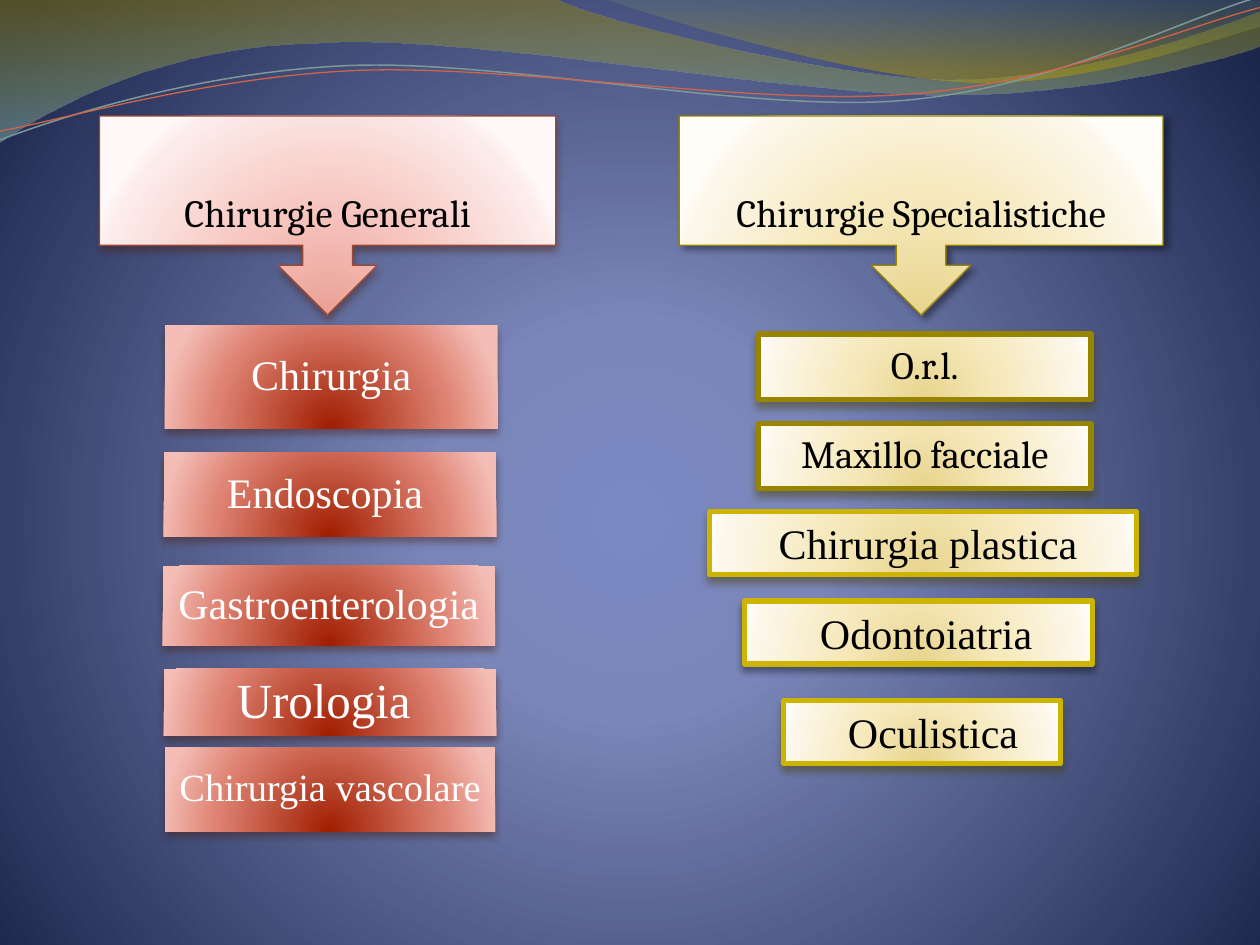
import math
from dataclasses import dataclass
from lxml import etree
from pptx import Presentation
from pptx.dml.color import RGBColor
from pptx.enum.shapes import MSO_SHAPE
from pptx.enum.text import MSO_ANCHOR, MSO_AUTO_SIZE, PP_ALIGN
from pptx.oxml.ns import qn
from pptx.util import Inches, Pt

RECT = MSO_SHAPE.RECTANGLE
CALLOUT = MSO_SHAPE.DOWN_ARROW_CALLOUT
TOP, MIDDLE = MSO_ANCHOR.TOP, MSO_ANCHOR.MIDDLE
GROW, FIXED = MSO_AUTO_SIZE.SHAPE_TO_FIT_TEXT, MSO_AUTO_SIZE.NONE
CENTER = PP_ALIGN.CENTER
SERIF, HEAD = "Times New Roman", "Cambria"
COLORS = {
    "black": "000000", "white": "FFFFFF", "red_edge": "9C4834",
    "olive": "978500", "gold": "CCB400", "teal_wave": "7C999A",
    "red_wave": "D16349", "red_shadow": "4B2218", "olive_shadow": "483F00",
}
GRADIENTS = {
    "night": [(0, "7A88C3"), (25, "7A86B9"), (100, "1B254B")],
    "pink": [(0, "EAA096"), (43, "F7C5BF"), (93, "FCEDEB"), (100, "FFF8F8")],
    "red": [(0, "A01D00"), (68, "DF8474"), (100, "F4BEB7")],
    "cream": [(0, "E7D48D"), (43, "F6E8BA"), (93, "FCF7EA"), (100, "FFFDF7")],
    "wave_left": [(0, "978500", 45), (100, "77A5A6", 55)],
    "wave_right": [(0, "648484", 30), (80, "B49F00", 45)],
}
BOX_FOCUS = (50, 130, 50, -30)
SHADOWS = {
    "red": ("red_shadow", 48, 4.5, 3, 90),
    "olive": ("olive_shadow", 48, 4.5, 3, 90),
    "black": ("black", 40, 4, 3, 90),
    "slanted": ("black", 40, 4, 3, 45),
}


@dataclass
class Box:
    text: str
    left: float
    top: float
    width: float
    height: float
    fill: str
    shadow: str
    size: float = 24
    font: str = SERIF
    color: str = "black"
    edge: str = ""
    weight: float = 3
    nudge: float = 0
    inset: float = 0.09
    kind: int = RECT
    grow: bool = False


@dataclass
class Wave:
    start: tuple
    steps: list
    fill: str = ""
    edge: str = ""
    weight: float = 0
    center: tuple = (0, 0)
    tilt: float = 0


def red_box(text: str, left: float, top: float, width: float, height: float,
            **extra) -> Box:
    return Box(text, left, top, width, height, "red", "red", color="white", **extra)


def olive_box(text: str, top: float) -> Box:
    return Box(text, 6.02, top, 2.64, 0.52, "cream", "olive", 22, HEAD, edge="olive")


def gold_box(text: str, left: float, top: float, width: float, nudge: float,
             shadow: str = "olive") -> Box:
    return Box(text, left, top, width, 0.5, "cream", shadow, edge="gold",
               nudge=nudge, inset=0.1, grow=True)


def header(text: str, left: float, width: float, fill: str, shadow: str, edge: str) -> Box:
    return Box(text, left, 0.92, width, 1.58, fill, shadow, 22, HEAD,
               edge=edge, weight=0.75, kind=CALLOUT)


BOXES = [
    header("Chirurgie Generali", 0.79, 3.62, "pink", "red", "red_edge"),
    olive_box("O.r.l.", 2.65),
    red_box("Chirurgia", 1.31, 2.58, 2.64, 0.82, inset=0.1),
    red_box("Chirurgia vascolare", 1.31, 5.93, 2.62, 0.67, size=22),
    red_box("Gastroenterologia", 1.29, 4.49, 2.64, 0.63, inset=0.1),
    red_box("Endoscopia", 1.3, 3.59, 2.64, 0.67, nudge=-0.08, inset=0.1),
    red_box("Urologia", 1.3, 5.31, 2.64, 0.53, size=28, nudge=-0.1, inset=0.12),
    header("Chirurgie Specialistiche", 5.39, 3.84, "cream", "slanted", "olive"),
    olive_box("Maxillo facciale", 3.36),
    gold_box("Odontoiatria", 5.91, 4.77, 2.76, 0.12, "black"),
    gold_box("Oculistica", 6.22, 5.56, 2.2, 0.17),
    gold_box("Chirurgia plastica", 5.63, 4.06, 3.39, 0.08),
]
WAVES = [
    Wave((0, 0), [
        (4.4, -0.01), (4.76, 0.17, 6.64, 0.63, 7.58, 0.63),
        (8.53, 0.63, 9.58, 0.26, 10, 0.09), (10.01, 0.36),
        (9.83, 0.44, 8.7, 0.76, 7.46, 0.75), (6.22, 0.75, 3.82, 0.28, 2.57, 0.34),
        (1.29, 0.36, 0.46, 0.83, -0.01, 1.13), (0, 0)], fill="wave_left"),
    Wave((4.79, -0.01), [
        (5.09, 0.11, 6.82, 0.62, 7.69, 0.65), (8.56, 0.69, 9.61, 0.32, 10, 0.21),
        (10, 0), (4.79, -0.01)], fill="wave_right"),
    Wave((0, 1.11), [
        (0.48, 0.93, 1.58, 0.57, 2.77, 0.52), (3.95, 0.47, 5.93, 0.89, 7.13, 0.8),
        (8.33, 0.71, 9.38, 0.15, 9.98, -0.02)], "", "teal_wave", 0.85, (4.99, 0.57), -2.7),
    Wave((0, 1.04), [
        (0.47, 0.96, 1.64, 0.61, 2.83, 0.56), (4.03, 0.51, 5.97, 0.84, 7.17, 0.75),
        (8.36, 0.67, 9.41, 0.21, 10, 0.06)], "", "red_wave", 0.75, (5, 0.59), -2.7),
]


def add_color(parent, value: str, alpha: float = 100) -> None:
    clr = etree.SubElement(parent, qn("a:srgbClr"), val=value)
    if alpha < 100:
        etree.SubElement(clr, qn("a:alpha"), val=str(alpha * 1000))


def set_gradient(fill, props, name: str, focus: tuple = ()) -> None:
    fill.solid()
    grad = etree.Element(qn("a:gradFill"), rotWithShape="1")
    stops = etree.SubElement(grad, qn("a:gsLst"))
    for pos, *color in GRADIENTS[name]:
        add_color(etree.SubElement(stops, qn("a:gs"), pos=str(pos * 1000)), *color)
    if focus:
        circle = etree.SubElement(grad, qn("a:path"))
        circle.set("path", "circle")
        sides = {k: str(v * 1000) for k, v in zip("ltrb", focus)}
        etree.SubElement(circle, qn("a:fillToRect"), **sides)
    else:
        etree.SubElement(grad, qn("a:lin"), ang="5400000", scaled="1")
    props.replace(props.find(qn("a:solidFill")), grad)


def set_line(sp, edge: str, weight: float) -> None:
    if edge:
        sp.line.color.rgb = RGBColor.from_string(COLORS[edge])
        sp.line.width = Pt(weight)
    else:
        sp.line.fill.background()


def set_shadow(sp, name: str) -> None:
    color, alpha, blur, dist, angle = SHADOWS[name]
    effects = sp._element.spPr.find(qn("a:effectLst"))
    outer = etree.SubElement(effects, qn("a:outerShdw"), blurRad=str(Pt(blur)),
                             dist=str(Pt(dist)), dir=str(angle * 60000), rotWithShape="0")
    add_color(outer, COLORS[color], alpha)


def untilt(wave: Wave, x: float, y: float) -> tuple:
    a, (cx, cy) = math.radians(-wave.tilt), wave.center
    dx, dy = x - cx, y - cy
    return (Inches(cx + dx * math.cos(a) - dy * math.sin(a)),
            Inches(cy + dx * math.sin(a) + dy * math.cos(a)))


def draw_wave(s, master, wave: Wave) -> None:
    points = [untilt(wave, *step[i:i + 2])
              for step in wave.steps for i in range(0, len(step), 2)]
    builder = s.shapes.build_freeform(*untilt(wave, *wave.start))
    builder.add_line_segments(points, close=bool(wave.fill))
    sp = builder.convert_to_shape()
    segments = iter(list(sp._element.iter(qn("a:lnTo"))))
    for step in wave.steps:
        parts = [next(segments) for _ in range(len(step) // 2)]
        if len(parts) == 3:
            curve = etree.Element(qn("a:cubicBezTo"))
            parts[0].addprevious(curve)
            for part in parts:
                curve.append(part[0])
                part.getparent().remove(part)
    sp.rotation = wave.tilt
    sp.shadow.inherit = False
    if wave.fill:
        set_gradient(sp.fill, sp._element.spPr, wave.fill)
    else:
        sp.fill.background()
    set_line(sp, wave.edge, wave.weight)
    master.shapes._spTree.append(sp._element)


def write_text(sp, box: Box) -> None:
    tf = sp.text_frame
    edge = Inches(0.05 if box.grow else box.inset)
    frame = {
        "word_wrap": True, "auto_size": GROW if box.grow else FIXED,
        "vertical_anchor": TOP if box.grow else MIDDLE,
        "margin_left": Inches(box.inset + max(box.nudge, 0)),
        "margin_right": Inches(box.inset + max(-box.nudge, 0)),
        "margin_top": edge, "margin_bottom": edge,
    }
    for key, value in frame.items():
        setattr(tf, key, value)
    p = tf.paragraphs[0]
    p.alignment = CENTER
    if not box.grow:
        p.line_spacing = 0.9
    r = p.add_run()
    r.text = box.text
    for key, value in {"size": Pt(box.size), "name": box.font}.items():
        setattr(r.font, key, value)
    r.font.color.rgb = RGBColor.from_string(COLORS[box.color])


def draw_box(s, box: Box) -> None:
    place = [Inches(v) for v in (box.left, box.top, box.width, box.height)]
    sp = s.shapes.add_shape(box.kind, *place)
    sp.shadow.inherit = False
    set_gradient(sp.fill, sp._element.spPr, box.fill, BOX_FOCUS)
    set_line(sp, box.edge, box.weight)
    set_shadow(sp, box.shadow)
    write_text(sp if box.grow else s.shapes.add_textbox(*place), box)


def main() -> None:
    prs = Presentation()
    prs.slide_width, prs.slide_height = Inches(10), Inches(7.5)
    s = prs.slides.add_slide(prs.slide_layouts[6])
    bg = s.background.fill
    bg.solid()
    set_gradient(bg, s._element.find(".//" + qn("p:bgPr")), "night", (10, 110, 10, 100))
    for wave in WAVES:
        draw_wave(s, prs.slide_master, wave)
    for box in BOXES:
        draw_box(s, box)
    prs.save("out.pptx")


if __name__ == "__main__":
    main()
